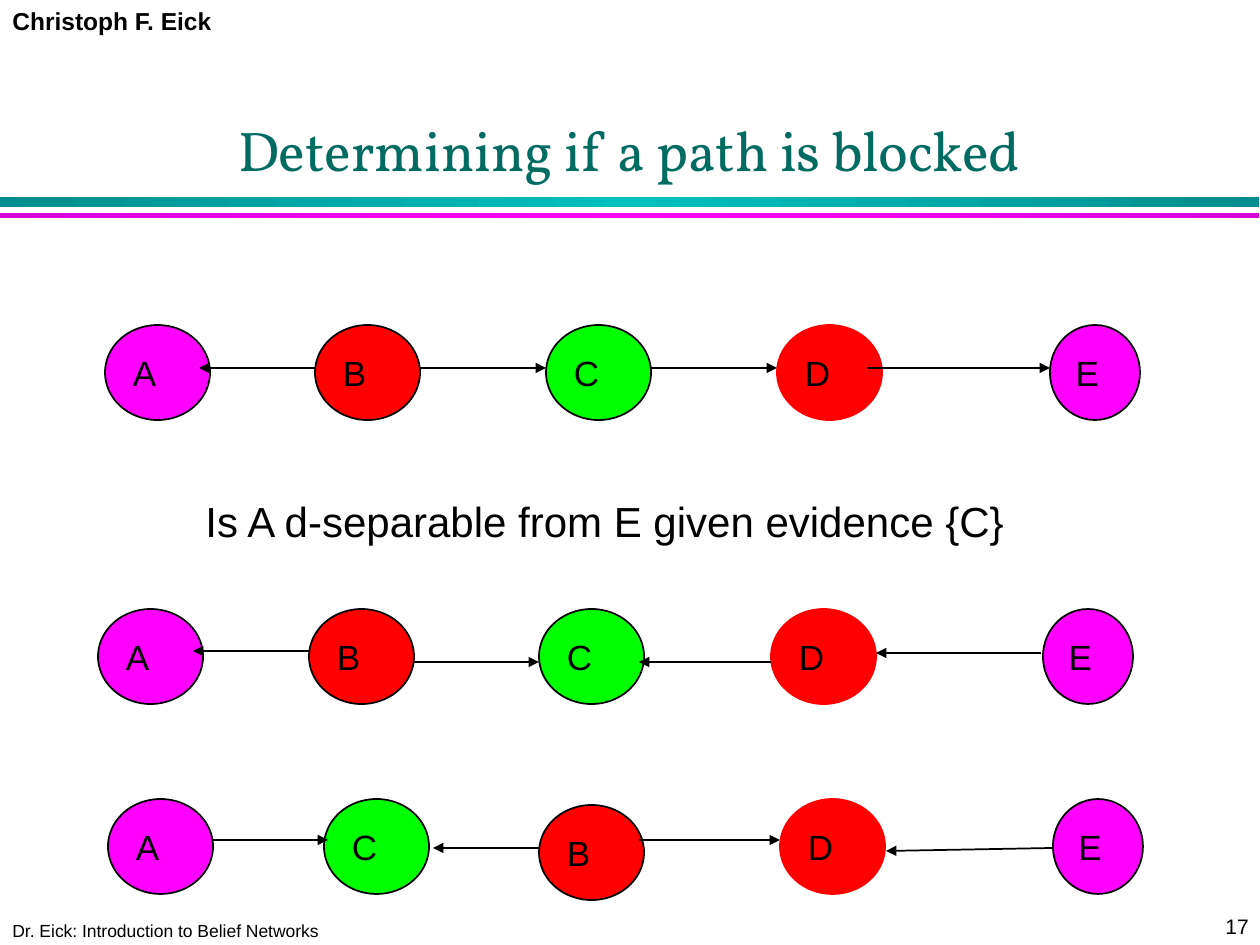
from dataclasses import dataclass

from lxml import etree
from pptx import Presentation
from pptx.dml.color import RGBColor
from pptx.enum import shapes, text
from pptx.oxml import ns
from pptx.util import Pt


@dataclass(frozen=True)
class Theme:
    sans: str = "Arial"
    serif: str = "Vollkorn"
    ink: str = "000000"
    title: str = "006B61"
    pink: str = "FF00FF"
    red: str = "FF0000"
    green: str = "00FF00"
    teal_bar: tuple = ("008E8E", "00C0C0", "008E8E")
    pink_bar: tuple = ("DA00DA", "FF00FF", "DA00DA")
    title_pt: int = 32
    query_pt: int = 24
    node_pt: int = 20
    head_pt: int = 14
    page_pt: int = 12
    foot_pt: int = 10
    line_pt: int = 1


T = Theme()
SCALE = 914400 / 126  # EMU in one px
NODE_W, END_W, NODE_H = 105, 90, 95

# Fill and outline of each node
LOOKS = {
    "A": (T.pink, T.ink),
    "B": (T.red, T.ink),
    "C": (T.green, T.ink),
    "D": (T.red, T.red),
    "E": (T.pink, T.ink),
}

# Each path: nodes as (name, left, top), arrows as (x1, y1, x2, y2)
PATHS = [
    ([("A", 105, 325), ("B", 315, 325), ("C", 546, 325),
      ("D", 777, 325), ("E", 1050, 325)],
     [(315, 368, 199, 368), (420, 368, 546, 368),
      (651, 368, 777, 368), (867, 368, 1050, 368)]),
    ([("A", 98, 609), ("B", 309, 609), ("C", 539, 609),
      ("D", 771, 609), ("E", 1043, 609)],
     [(309, 651, 193, 651), (414, 662, 539, 662),
      (771, 662, 639, 662), (1041, 653, 876, 653)]),
    ([("A", 108, 799), ("C", 324, 799), ("B", 539, 805),
      ("D", 780, 799), ("E", 1053, 799)],
     [(213, 840, 328, 840), (539, 848, 433, 848),
      (639, 840, 780, 840), (1053, 848, 886, 851)]),
]


def px(*vals):
    return [round(v * SCALE) for v in vals]


def rgb(code):
    return RGBColor.from_string(code)


def write(shape, words, size, face=T.sans, color=T.ink, bold=False,
          align=text.PP_ALIGN.LEFT):
    frame = shape.text_frame
    frame.text = words
    para = frame.paragraphs[0]
    para.alignment = align
    font = para.runs[0].font
    font.name, font.size, font.bold = face, Pt(size), bold
    font.color.rgb = rgb(color)
    return frame


def label(slide, box, words, size, wrap=False, bold=False):
    shape = slide.shapes.add_textbox(*px(*box))
    frame = write(shape, words, size, bold=bold)
    frame.word_wrap = wrap


def bar(slide, top, height, colors):
    shape = slide.shapes.add_shape(
        shapes.MSO_SHAPE.RECTANGLE, *px(0, top, 1259, height))
    shape.shadow.inherit = False
    shape.line.fill.background()
    shape.fill.gradient()
    shape.fill.gradient_angle = 0
    # Replace the default stops with evenly spaced ones
    stops = shape.fill._fill._gradFill.find(ns.qn("a:gsLst"))
    for stop in list(stops):
        stops.remove(stop)
    for i, color in enumerate(colors):
        stop = etree.SubElement(stops, ns.qn("a:gs"), pos=str(i * 50000))
        etree.SubElement(stop, ns.qn("a:srgbClr"), val=color)


def node(slide, name, left, top):
    fill, edge = LOOKS[name]
    width = END_W if name == "E" else NODE_W
    shape = slide.shapes.add_shape(
        shapes.MSO_SHAPE.OVAL, *px(left, top, width, NODE_H))
    shape.shadow.inherit = False
    shape.fill.solid()
    shape.fill.fore_color.rgb = rgb(fill)
    shape.line.color.rgb = rgb(edge)
    shape.line.width = Pt(T.line_pt)
    frame = write(shape, name, T.node_pt)
    frame.word_wrap = False
    frame.vertical_anchor = text.MSO_ANCHOR.MIDDLE


def arrow(slide, ends):
    link = slide.shapes.add_connector(
        shapes.MSO_CONNECTOR.STRAIGHT, *px(*ends))
    link.line.color.rgb = rgb(T.ink)
    link.line.width = Pt(T.line_pt)
    etree.SubElement(link.line._get_or_add_ln(), ns.qn("a:tailEnd"),
                     type="triangle")
    etree.SubElement(link._element.spPr, ns.qn("a:effectLst"))


def heading(slide, words):
    shape = slide.shapes.title
    shape.left, shape.top, shape.width, shape.height = px(94, 84, 1071, 105)
    frame = write(shape, words, T.title_pt, T.serif, T.title,
                  align=text.PP_ALIGN.CENTER)
    frame.vertical_anchor = text.MSO_ANCHOR.BOTTOM


def main():
    deck = Presentation()
    deck.slide_width, deck.slide_height = px(1260, 945)
    slide = deck.slides.add_slide(deck.slide_layouts[5])

    # Rules, header and footer
    bar(slide, 197, 10, T.teal_bar)
    bar(slide, 213, 5, T.pink_bar)
    label(slide, (0, 0, 226, 42), "Christoph F. Eick", T.head_pt, bold=True)
    label(slide, (0, 914, 423, 34),
          "Dr. Eick: Introduction to Belief Networks", T.foot_pt, wrap=True)
    label(slide, (1213, 907, 50, 38), "17", T.page_pt)

    # Title and question
    heading(slide, "Determining if a path is blocked")
    label(slide, (193, 489, 832, 63),
          "Is A d-separable from E given evidence {C}", T.query_pt)

    # Paths
    for nodes, arrows in PATHS:
        for spot in nodes:
            node(slide, *spot)
        for ends in arrows:
            arrow(slide, ends)

    deck.save("out.pptx")


if __name__ == "__main__":
    main()
